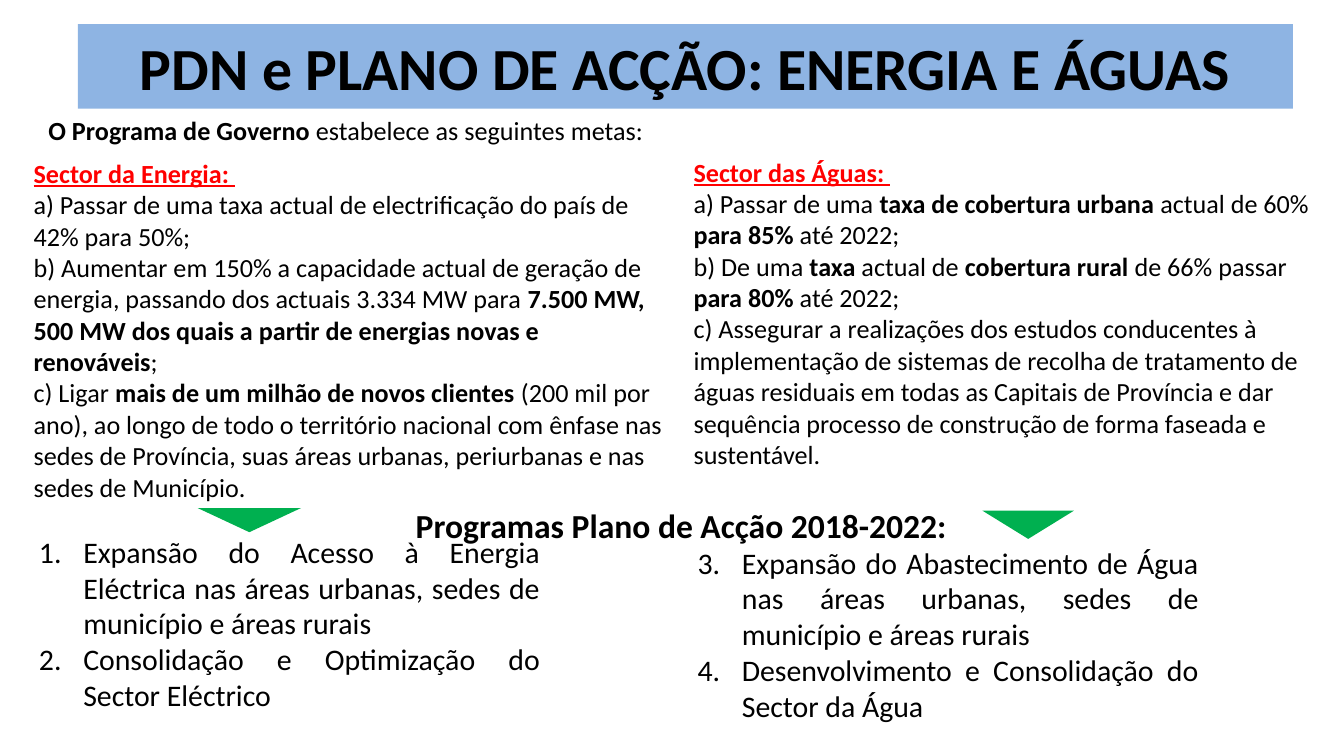
"""Builds the slide on the government targets and action plan for energy and water."""
from dataclasses import dataclass
from typing import Optional

from lxml.etree import SubElement
from pptx import Presentation
from pptx.dml.color import RGBColor
from pptx.enum.shapes import MSO_SHAPE as Preset
from pptx.enum.text import MSO_ANCHOR as Anchor, PP_ALIGN as Align
from pptx.oxml.ns import qn
from pptx.util import Inches, Pt

FONT = "Calibri"
BLACK, RED, GREEN, BLUE = "000000", "FF0000", "00B050", "8EB4E3"
INDENT = 0.33
SLIDE_WIDTH = Inches(10)
SLIDE_HEIGHT = SLIDE_WIDTH * 9 // 16


@dataclass(frozen=True)
class Box:
    left: float
    top: float
    width: float
    height: float

    def lengths(self) -> tuple:
        return tuple(map(Inches, (self.left, self.top, self.width, self.height)))


@dataclass(frozen=True)
class TextBlock:
    box: Box
    lines: tuple[str, ...]
    size: float = 14
    align: Align = Align.LEFT
    heading: str = ""
    first_number: Optional[int] = None


TITLE = TextBlock(Box(0.58, 0.18, 9.04, 0.63),
                  ("**PDN e PLANO DE ACÇÃO: ENERGIA E ÁGUAS**",), 32, Align.CENTER)

BLOCKS = (
    TextBlock(Box(0.27, 0.81, 9.35, 0.32),
              ("**O Programa de Governo **estabelece as seguintes metas:",)),
    TextBlock(
        Box(5.07, 1.12, 4.91, 2.44),
        ("a) Passar de uma **taxa de cobertura urbana **actual de 60% **para 85% **até 2022;",
         "b) De uma **taxa **actual de **cobertura rural **de 66% passar **para 80% **até 2022;",
         "c) Assegurar a realizações dos estudos conducentes à implementação de sistemas de "
         "recolha de tratamento de águas residuais em todas as Capitais de Província e dar "
         "sequência processo de construção de forma faseada e sustentável."),
        heading="Sector das Águas: "),
    TextBlock(
        Box(0.16, 1.13, 4.91, 2.44),
        ("a) Passar de uma taxa actual de electrificação do país de 42% para 50%;",
         "b) Aumentar em 150% a capacidade actual de geração de energia, passando dos actuais "
         "3.334 MW para **7.500 MW, 500 MW dos quais a partir de energias novas e renováveis**;",
         "c) Ligar **mais de um milhão de novos clientes **(200 mil por ano), ao longo de todo o "
         "território nacional com ênfase nas sedes de Província, suas áreas urbanas, "
         "periurbanas e nas sedes de Município."),
        heading="Sector da Energia: "),
    TextBlock(
        Box(0.2, 3.93, 3.91, 1.7),
        ("Expansão do Acesso à Energia Eléctrica nas áreas urbanas, sedes de município e áreas rurais",
         "Consolidação e Optimização do Sector Eléctrico"),
        16, Align.JUSTIFY, first_number=1),
    TextBlock(
        Box(5.1, 4.01, 3.91, 1.43),
        ("Expansão do Abastecimento de Água nas áreas urbanas, sedes de município e áreas rurais",
         "Desenvolvimento e Consolidação do Sector da Água"),
        16, Align.JUSTIFY, first_number=3),
    TextBlock(Box(0.72, 3.72, 8.7, 0.39),
              ("**Programas Plano de Acção 2018-2022:**",), 18, Align.CENTER),
)

DOWN_TRIANGLES = (Box(1.47, 3.78, 0.77, 0.18), Box(7.31, 3.8, 0.68, 0.21))


def color(value: str) -> RGBColor:
    return RGBColor.from_string(value)


def add_filled_shape(slide, preset: Preset, box: Box, fill: str):
    shape = slide.shapes.add_shape(preset, *box.lengths())
    shape.shadow.inherit = False
    shape.fill.solid()
    shape.fill.fore_color.rgb = color(fill)
    shape.line.fill.background()
    return shape


def number_paragraph(paragraph, start: int) -> None:
    properties = paragraph._p.get_or_add_pPr()
    properties.set("marL", str(Inches(INDENT)))
    properties.set("indent", str(-Inches(INDENT)))
    SubElement(properties, qn("a:buFont"), typeface="+mj-lt")
    SubElement(properties, qn("a:buAutoNum"), type="arabicPeriod", startAt=str(start))


def style_paragraph(paragraph, block: TextBlock, text_color: str) -> None:
    paragraph.alignment = block.align
    paragraph.font.name = FONT
    paragraph.font.size = Pt(block.size)
    paragraph.font.color.rgb = color(text_color)


def write_line(paragraph, line: str) -> None:
    for index, part in enumerate(line.split("**")):
        if part:
            run = paragraph.add_run()
            run.text = part
            run.font.bold = index % 2 == 1


def write_text(shape, block: TextBlock) -> None:
    frame = shape.text_frame
    frame.word_wrap = True
    frame.margin_left = frame.margin_right = Inches(0.09)
    frame.margin_top = frame.margin_bottom = Inches(0.04)
    lines = ((block.heading,) if block.heading else ()) + block.lines
    for index, line in enumerate(lines):
        paragraph = frame.add_paragraph() if index else frame.paragraphs[0]
        is_heading = bool(block.heading) and index == 0
        style_paragraph(paragraph, block, RED if is_heading else BLACK)
        if is_heading:
            paragraph.font.underline = True
            line = f"**{line}**"
        write_line(paragraph, line)
        if block.first_number is not None:
            number_paragraph(paragraph, block.first_number)


def add_text_block(slide, block: TextBlock) -> None:
    shape = slide.shapes.add_textbox(*block.box.lengths())
    shape.text_frame.vertical_anchor = Anchor.TOP
    write_text(shape, block)


def main() -> None:
    presentation = Presentation()
    presentation.slide_width, presentation.slide_height = SLIDE_WIDTH, SLIDE_HEIGHT
    slide = presentation.slides.add_slide(presentation.slide_layouts[6])
    write_text(add_filled_shape(slide, Preset.RECTANGLE, TITLE.box, BLUE), TITLE)
    for block in BLOCKS:
        add_text_block(slide, block)
    for box in DOWN_TRIANGLES:
        add_filled_shape(slide, Preset.ISOSCELES_TRIANGLE, box, GREEN).rotation = 180
    presentation.save("out.pptx")


if __name__ == "__main__":
    main()
